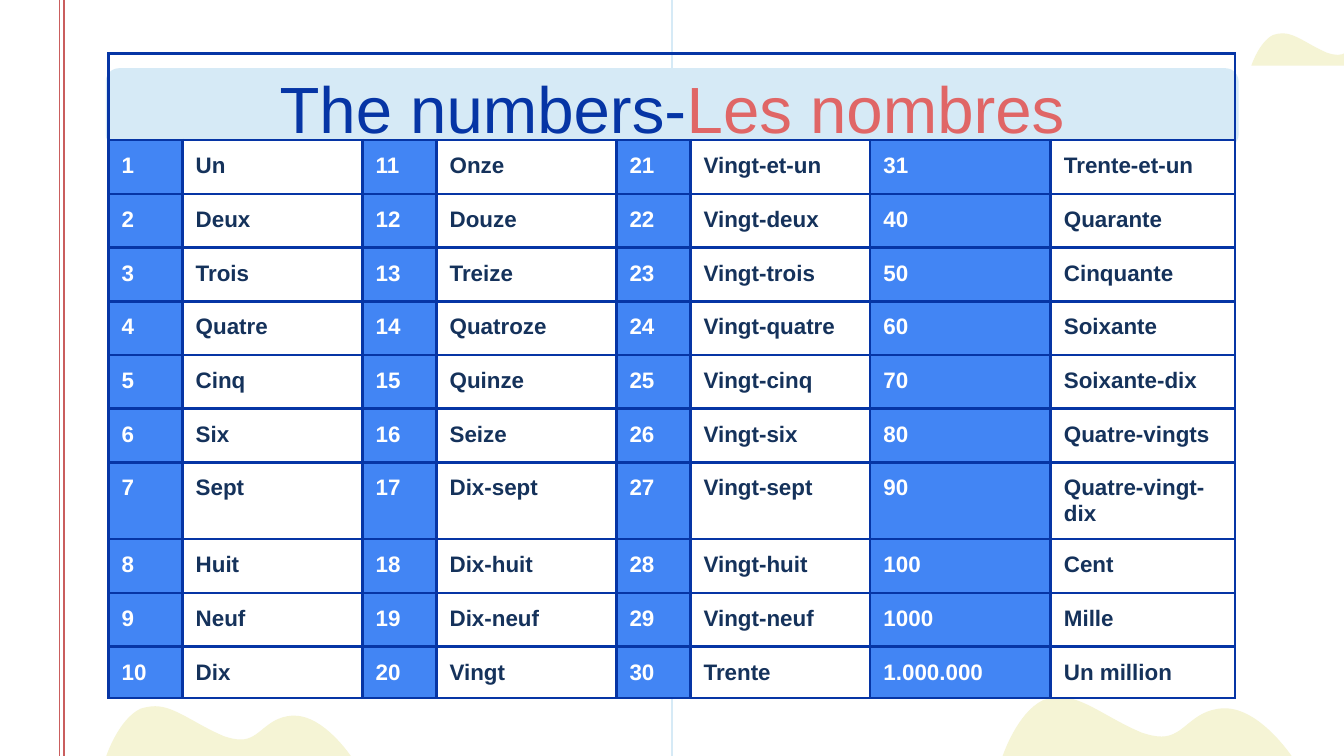
from dataclasses import dataclass

from lxml import etree
from pptx import Presentation
from pptx import util as u
from pptx.dml.color import RGBColor
from pptx.enum import shapes, text
from pptx.oxml import ns

Cm = u.Cm


@dataclass(frozen=True)
class Theme:
    font: str = "Arial"
    navy: str = "0635A5"
    coral: str = "E06666"
    blue: str = "4285F4"
    ink: str = "15325B"
    white: str = "FFFFFF"
    sky: str = "D6EAF6"
    margin: str = "CA5E5E"
    cream: str = "F5F4D5"
    title_size: int = 35
    cell_size: int = 12
    rule_width: float = 0.75
    border_width: float = 1.5


@dataclass(frozen=True)
class Rule:
    x: float
    color: str


@dataclass(frozen=True)
class Box:
    left: float
    top: float
    width: float
    height: float

    def lengths(self) -> tuple[int, int, int, int]:
        return Cm(self.left), Cm(self.top), Cm(self.width), Cm(self.height)


T = Theme()
SLIDE_W, SLIDE_H = 25.4, 14.29
INSET = Cm(0.25)
RULES = [Rule(12.7, T.sky), Rule(1.12, T.margin), Rule(1.21, T.margin)]
BANNER = Box(2, 1.29, 21.41, 1.5)
POINTER = Box(21.69, 2.59, 0.81, 0.84)
TITLE = Box(2, 1.23, 21.41, 1.6)
HILLS = [Box(18.95, 13.18, 5.46, 1.11), Box(23.65, 0.63, 2.97, 0.61),
         Box(2.01, 13.35, 4.62, 0.94)]
HILL_START = (0.2, 0)
HILL_CURVES = [
    [(0.18, 0), (0.16, 0.02), (0.14, 0.05)],
    [(0.05, 0.26), (0, 1), (0, 1)],
    [(1, 1)],
    [(1, 1), (0.89, 0.19), (0.77, 0.19)],
    [(0.77, 0.19), (0.76, 0.19), (0.76, 0.19)],
    [(0.65, 0.23), (0.63, 0.67), (0.55, 0.67)],
    [(0.53, 0.67), (0.51, 0.65), (0.48, 0.6)],
    [(0.36, 0.35), (0.28, 0), (0.2, 0)],
]
COLS = [1.4, 3.4, 1.4, 3.4, 1.4, 3.4, 3.41, 3.48]
ROWS = [1.64] + [9.14 / 9] * 9 + [0.94]
NUMBERS = [
    [*range(1, 11)],
    [*range(11, 21)],
    [*range(21, 31)],
    [31, *range(40, 101, 10), 1000, "1.000.000"],
]
WORDS = [
    ["Un", "Deux", "Trois", "Quatre", "Cinq", "Six", "Sept", "Huit", "Neuf", "Dix"],
    ["Onze", "Douze", "Treize", "Quatroze", "Quinze", "Seize", "Dix-sept",
     "Dix-huit", "Dix-neuf", "Vingt"],
    ["Vingt-et-un", "Vingt-deux", "Vingt-trois", "Vingt-quatre", "Vingt-cinq",
     "Vingt-six", "Vingt-sept", "Vingt-huit", "Vingt-neuf", "Trente"],
    ["Trente-et-un", "Quarante", "Cinquante", "Soixante", "Soixante-dix",
     "Quatre-vingts", "Quatre-vingt-dix", "Cent", "Mille", "Un million"],
]


def rgb(color: str) -> RGBColor:
    return RGBColor.from_string(color)


def write(p, content: str, *, size: float, color: str, bold: bool = False) -> None:
    r = p.add_run()
    r.text = content
    r.font.name = T.font
    r.font.size = u.Pt(size)
    r.font.bold = bold
    r.font.color.rgb = rgb(color)


def paint(sp, color: str) -> None:
    sp.shadow.inherit = False
    sp.fill.solid()
    sp.fill.fore_color.rgb = rgb(color)
    sp.line.fill.background()


def draw_rule(s, rule: Rule) -> None:
    x = Cm(rule.x)
    line = s.shapes.add_connector(shapes.MSO_CONNECTOR.STRAIGHT, x, 0, x, Cm(SLIDE_H))
    line.line.color.rgb = rgb(rule.color)
    line.line.width = u.Pt(T.rule_width)
    etree.SubElement(line._element.spPr, ns.qn("a:effectLst"))


def draw_hill(s, hill: Box) -> None:
    left, top, width, height = hill.lengths()

    def place(point: tuple[float, float]) -> tuple[int, int]:
        return left + round(point[0] * width), top + round(point[1] * height)

    builder = s.shapes.build_freeform(*place(HILL_START))
    builder.add_line_segments([place(curve[-1]) for curve in HILL_CURVES], close=True)
    sp = builder.convert_to_shape()
    segments = list(sp._element.iter(ns.qn("a:lnTo")))
    for segment, curve in zip(segments, HILL_CURVES):
        if len(curve) == 3:
            segment.tag = ns.qn("a:cubicBezTo")
            for i, point in enumerate(curve[:-1]):
                x, y = place(point)
                pt = etree.Element(ns.qn("a:pt"), x=str(x - left), y=str(y - top))
                segment.insert(i, pt)
    paint(sp, T.cream)


def draw_banner(s) -> None:
    kinds = shapes.MSO_SHAPE
    paint(s.shapes.add_shape(kinds.ROUNDED_RECTANGLE, *BANNER.lengths()), T.sky)
    pointer = s.shapes.add_shape(kinds.ISOSCELES_TRIANGLE, *POINTER.lengths())
    pointer.rotation = 180
    paint(pointer, T.sky)


def border(cell) -> None:
    props = cell._tc.get_or_add_tcPr()
    for i, side in enumerate(("lnL", "lnR", "lnT", "lnB")):
        ln = etree.Element(ns.qn(f"a:{side}"), w=str(u.Pt(T.border_width)))
        fill = etree.SubElement(ln, ns.qn("a:solidFill"))
        etree.SubElement(fill, ns.qn("a:srgbClr"), val=T.navy)
        props.insert(i, ln)


def fill_cell(cell, content: str, fill: str, color: str) -> None:
    cell.fill.solid()
    cell.fill.fore_color.rgb = rgb(fill)
    cell.margin_left = cell.margin_right = cell.margin_top = cell.margin_bottom = INSET
    write(cell.text_frame.paragraphs[0], content, size=T.cell_size, color=color, bold=True)


def draw_table(s) -> None:
    area = Box(2.05, 1.01, sum(COLS), sum(ROWS))
    tbl = s.shapes.add_table(len(ROWS), len(COLS), *area.lengths()).table
    tbl.first_row = tbl.horz_banding = False
    for col, width in zip(tbl.columns, COLS):
        col.width = Cm(width)
    for row, height in zip(tbl.rows, ROWS):
        row.height = Cm(height)
    for c in range(len(COLS)):
        tbl.cell(0, c).fill.background()
    tbl.cell(0, 0).merge(tbl.cell(0, len(COLS) - 1))
    for pair, (numbers, words) in enumerate(zip(NUMBERS, WORDS)):
        for row, (number, word) in enumerate(zip(numbers, words), 1):
            fill_cell(tbl.cell(row, 2 * pair), str(number), T.blue, T.white)
            fill_cell(tbl.cell(row, 2 * pair + 1), word, T.white, T.ink)
    for cell in tbl.iter_cells():
        border(cell)


def draw_title(s) -> None:
    tf = s.shapes.add_textbox(*TITLE.lengths()).text_frame
    tf.word_wrap = True
    tf.vertical_anchor = text.MSO_ANCHOR.MIDDLE
    tf.margin_left = tf.margin_right = tf.margin_top = tf.margin_bottom = INSET
    p = tf.paragraphs[0]
    p.alignment = text.PP_ALIGN.CENTER
    write(p, "The numbers-", size=T.title_size, color=T.navy)
    write(p, "Les nombres", size=T.title_size, color=T.coral)


def main() -> None:
    prs = Presentation()
    prs.slide_width, prs.slide_height = Cm(SLIDE_W), Cm(SLIDE_H)
    s = prs.slides.add_slide(prs.slide_layouts[6])
    for rule in RULES:
        draw_rule(s, rule)
    draw_banner(s)
    for hill in HILLS:
        draw_hill(s, hill)
    draw_table(s)
    draw_title(s)
    prs.save("out.pptx")


if __name__ == "__main__":
    main()
